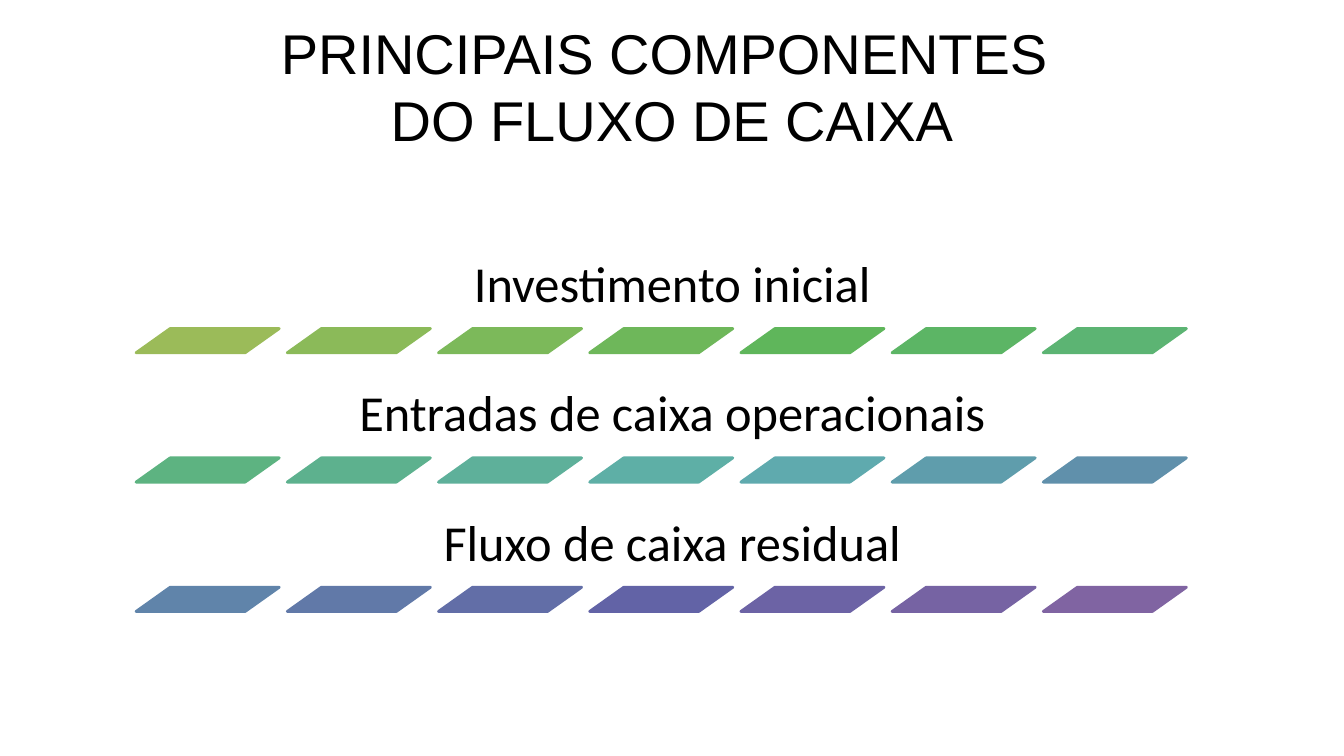
from dataclasses import dataclass

from pptx import Presentation
from pptx.dml.color import RGBColor
from pptx.enum.shapes import MSO_SHAPE
from pptx.enum.text import MSO_ANCHOR, PP_ALIGN
from pptx.slide import Slide
from pptx.util import Pt

BLACK = RGBColor(0x00, 0x00, 0x00)
WHITE = RGBColor(0xFF, 0xFF, 0xFF)

PAGE_WIDTH, PAGE_HEIGHT = 960, 540
LEFT = 97.2
FIRST_TOP, ROW_STEP = 164.9, 92.4
LABEL_WIDTH, LABEL_HEIGHT = 766, 69.8
DASH_WIDTH, DASH_HEIGHT, DASH_STEP = 102.24, 17.3, 108
DASH_SLANT = 1.408


@dataclass
class Label:
    text: str
    left: float
    top: float
    width: float
    height: float
    font: str
    size: float
    anchor: MSO_ANCHOR
    inset: float
    line_spacing: float = 1.0


@dataclass
class Component:
    name: str
    colors: list[RGBColor]


def palette(codes: str) -> list[RGBColor]:
    return [RGBColor.from_string(code) for code in codes.split()]


TITLE = Label("PRINCIPAIS COMPONENTES \vDO FLUXO DE CAIXA", 0, 0, PAGE_WIDTH, 121.7,
              "Arial", 40, MSO_ANCHOR.MIDDLE, 3.6)

COMPONENTS = [
    Component("Investimento inicial",
              palette("9BBB59 8BBA59 7CB95A 6EB75A 5FB65B 5CB565 5CB473")),
    Component("Entradas de caixa operacionais",
              palette("5DB381 5DB18E 5EB09A 5EAFA6 5FAAAE 5F9DAC 6090AB")),
    Component("Fluxo de caixa residual",
              palette("6084AA 6179A8 626EA7 6263A6 6C63A5 7663A3 8064A2")),
]


def add_label(page: Slide, label: Label) -> None:
    box = page.shapes.add_textbox(Pt(label.left), Pt(label.top),
                                  Pt(label.width), Pt(label.height))
    frame = box.text_frame
    frame.word_wrap = True
    frame.vertical_anchor = label.anchor
    frame.margin_left = frame.margin_right = Pt(label.inset)
    frame.margin_top = frame.margin_bottom = Pt(label.inset)
    frame.text = label.text
    para = frame.paragraphs[0]
    para.alignment = PP_ALIGN.CENTER
    para.line_spacing = label.line_spacing
    for span in para.runs:
        span.font.name = label.font
        span.font.size = Pt(label.size)
        span.font.color.rgb = BLACK


def add_dash(page: Slide, left: float, top: float, color: RGBColor) -> None:
    dash = page.shapes.add_shape(MSO_SHAPE.PARALLELOGRAM, Pt(left), Pt(top),
                                 Pt(DASH_WIDTH), Pt(DASH_HEIGHT))
    dash.adjustments[0] = DASH_SLANT
    dash.shadow.inherit = False
    dash.fill.solid()
    dash.fill.fore_color.rgb = color
    dash.line.color.rgb = color
    dash.line.width = Pt(2)


def add_component(page: Slide, component: Component, top: float) -> None:
    add_label(page, Label(component.name, LEFT, top, LABEL_WIDTH, LABEL_HEIGHT,
                          "Calibri", 36, MSO_ANCHOR.BOTTOM, 10.8, 0.9))
    for column, color in enumerate(component.colors):
        add_dash(page, LEFT + column * DASH_STEP, top + LABEL_HEIGHT, color)


def main() -> None:
    deck = Presentation()
    deck.slide_width, deck.slide_height = Pt(PAGE_WIDTH), Pt(PAGE_HEIGHT)
    page = deck.slides.add_slide(deck.slide_layouts[6])
    page.background.fill.solid()
    page.background.fill.fore_color.rgb = WHITE

    # Title
    add_label(page, TITLE)

    # Components, each underlined by a row of dashes
    for row, component in enumerate(COMPONENTS):
        add_component(page, component, FIRST_TOP + row * ROW_STEP)

    deck.save("out.pptx")


if __name__ == "__main__":
    main()
